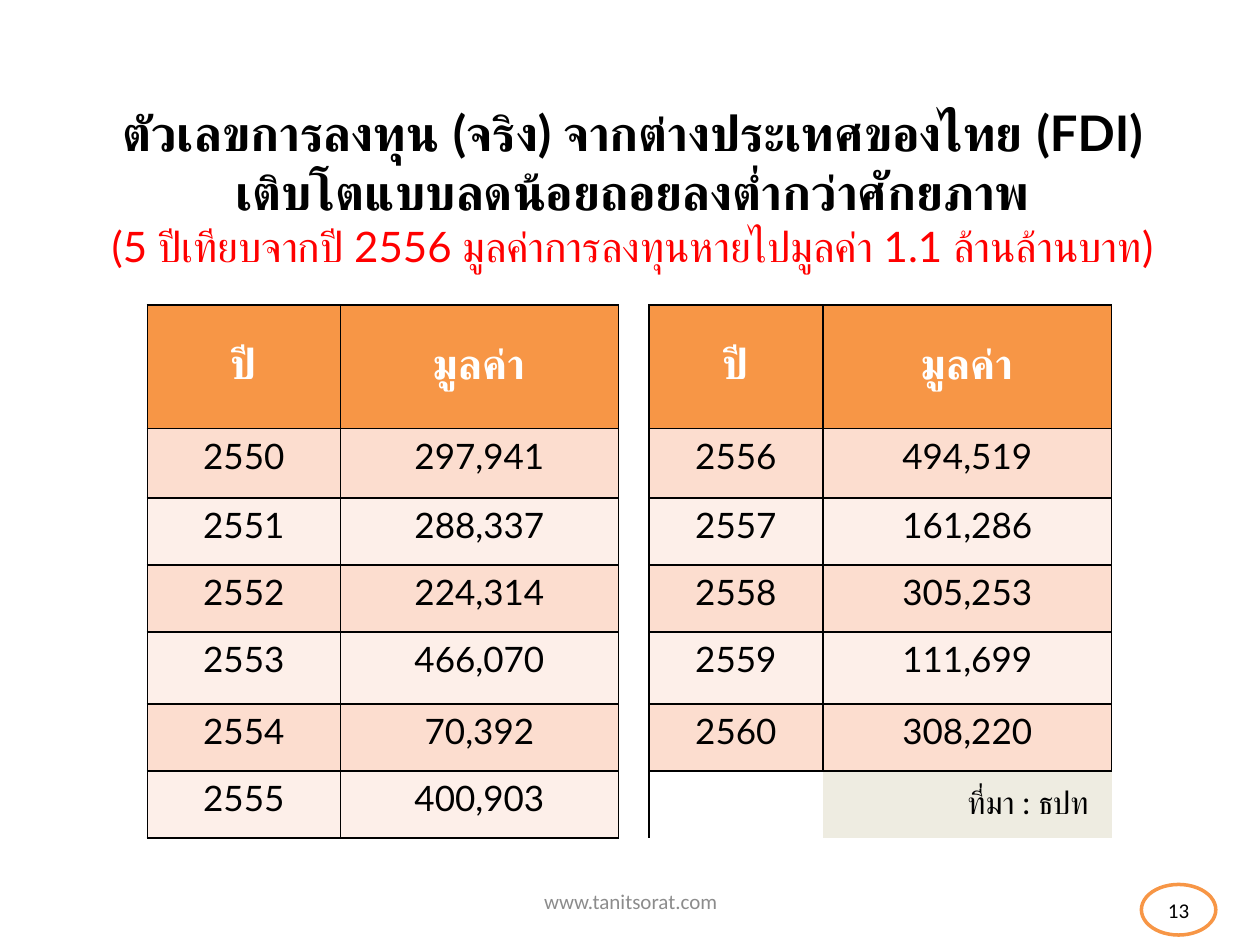
from dataclasses import dataclass

from lxml import etree
from pptx import Presentation
from pptx import util as u
from pptx.dml.color import RGBColor
from pptx.enum import shapes, text
from pptx.oxml.ns import qn


@dataclass(frozen=True)
class Theme:
    black: str = "000000"
    white: str = "FFFFFF"
    red: str = "FF0000"
    orange: str = "F79646"
    band_dark: str = "FCDDCF"
    band_light: str = "FDEFE9"
    beige: str = "EEECE1"
    grey: str = "8C8C8C"
    title: int = 28
    subtitle: int = 24
    body: int = 20
    source: int = 18
    footer: int = 12
    font: str = "Lato"
    footer_font: str = "Calibri"


T = Theme()
CENTER, MIDDLE = text.PP_ALIGN.CENTER, text.MSO_ANCHOR.MIDDLE
NO_STYLE = "{2D5ABB26-0587-4C30-8999-92F81FD0307C}"


def write(tf, content, size, color=T.black, bold=False, font=T.font,
          align=CENTER, anchor=text.MSO_ANCHOR.TOP):
    """Add a formatted run to the first paragraph; each newline is a line break."""
    tf.word_wrap = True
    tf.vertical_anchor = anchor
    p = tf.paragraphs[0]
    p.alignment = align
    for i, line in enumerate(content.split("\n")):
        if i:
            p.add_line_break()
        if line:
            r = p.add_run()
            r.text = line
            r.font.size, r.font.bold, r.font.name = u.Pt(size), bold, font
            r.font.color.rgb = RGBColor.from_string(color)


def add_borders(cell, sides):
    tc_pr = cell._tc.get_or_add_tcPr()
    for side in sides:
        ln = etree.SubElement(tc_pr, qn(f"a:ln{side}"), w=str(u.Pt(1)))
        fill = etree.SubElement(ln, qn("a:solidFill"))
        etree.SubElement(fill, qn("a:srgbClr"), val=T.black)


prs = Presentation()
prs.slide_width, prs.slide_height = u.Cm(25.4), u.Cm(19.05)
s = prs.slides.add_slide(prs.slide_layouts[5])

# Title
title = s.shapes.title
title.left, title.top, title.width, title.height = map(u.Cm, (1.32, 2.18, 22.86, 3.18))
tf = title.text_frame
tf.auto_size = text.MSO_AUTO_SIZE.NONE
write(tf, "ตัวเลขการลงทุน (จริง) จากต่างประเทศของไทย (FDI)\n"
      "เติบโตแบบลดน้อยถอยลงต่ำกว่าศักยภาพ\n", T.title, bold=True, anchor=MIDDLE)
write(tf, "(5 ปีเทียบจากปี 2556 มูลค่าการลงทุนหายไปมูลค่า 1.1 ล้านล้านบาท)",
      T.subtitle, T.red, anchor=MIDDLE)

# Investment by year, in two blocks with an empty column between them
rows = [
    ("ปี", "มูลค่า", "", "ปี", "มูลค่า"),
    ("2550", "297,941", "", "2556", "494,519"),
    ("2551", "288,337", "", "2557", "161,286"),
    ("2552", "224,314", "", "2558", "305,253"),
    ("2553", "466,070", "", "2559", "111,699"),
    ("2554", "70,392", "", "2560", "308,220"),
    ("2555", "400,903", "", "", ""),
]
col_widths = (3.89, 5.61, 0.61, 3.51, 5.82)
row_heights = (2.49, 1.4, 1.35, 1.35, 1.45, 1.35, 1.35)
frame = s.shapes.add_table(len(rows), len(col_widths), u.Cm(2.97), u.Cm(6.15),
                           u.Cm(sum(col_widths)), u.Cm(sum(row_heights)))
next(frame._element.iter(qn("a:tableStyleId"))).text = NO_STYLE
table = frame.table
table.first_row = table.horz_banding = False
for column, width in zip(table.columns, col_widths):
    column.width = u.Cm(width)
for row, height in zip(table.rows, row_heights):
    row.height = u.Cm(height)

last = len(rows) - 1
for i, values in enumerate(rows):
    for j, value in enumerate(values):
        cell = table.cell(i, j)
        if value:
            add_borders(cell, "LRTB")
            fill = T.orange if i == 0 else T.band_dark if i % 2 else T.band_light
            if i == 0:
                write(cell.text_frame, value, T.subtitle, T.white, bold=True)
                cell.vertical_anchor = MIDDLE
            else:
                write(cell.text_frame, value, T.body)
        else:
            add_borders(cell, "T" if j > 2 else "L" if i == last else "LR")
            fill = T.beige if j == 4 else None
        if fill:
            cell.fill.solid()
            cell.fill.fore_color.rgb = RGBColor.from_string(fill)
        else:
            cell.fill.background()

# Source and footer
source = s.shapes.add_textbox(u.Cm(19.25), u.Cm(15.67), u.Cm(3.76), u.Cm(1.02))
write(source.text_frame, "ที่มา : ธปท", T.source, align=text.PP_ALIGN.LEFT)

footer = s.shapes.add_textbox(u.Cm(8.69), u.Cm(17.65), u.Cm(8.05), u.Cm(1.02))
write(footer.text_frame, "www.tanitsorat.com", T.footer, T.grey,
      font=T.footer_font, anchor=MIDDLE)

badge = s.shapes.add_shape(shapes.MSO_SHAPE.OVAL, u.Cm(23.01), u.Cm(17.83),
                           u.Cm(1.5), u.Cm(1.02))
badge.shadow.inherit = False
badge.fill.solid()
badge.fill.fore_color.rgb = RGBColor.from_string(T.white)
badge.line.color.rgb = RGBColor.from_string(T.orange)
badge.line.width = u.Pt(2)
write(badge.text_frame, "13", T.footer, font=T.footer_font, anchor=MIDDLE)

prs.save("out.pptx")
